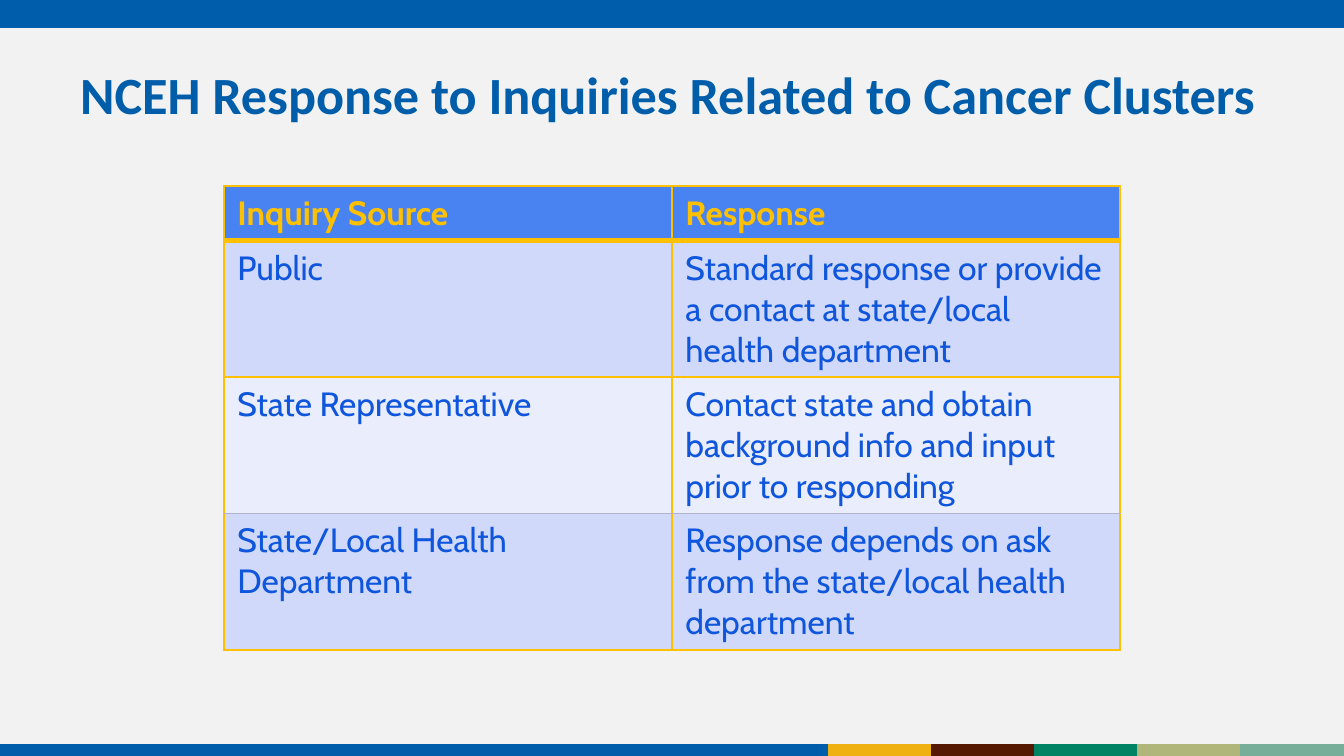
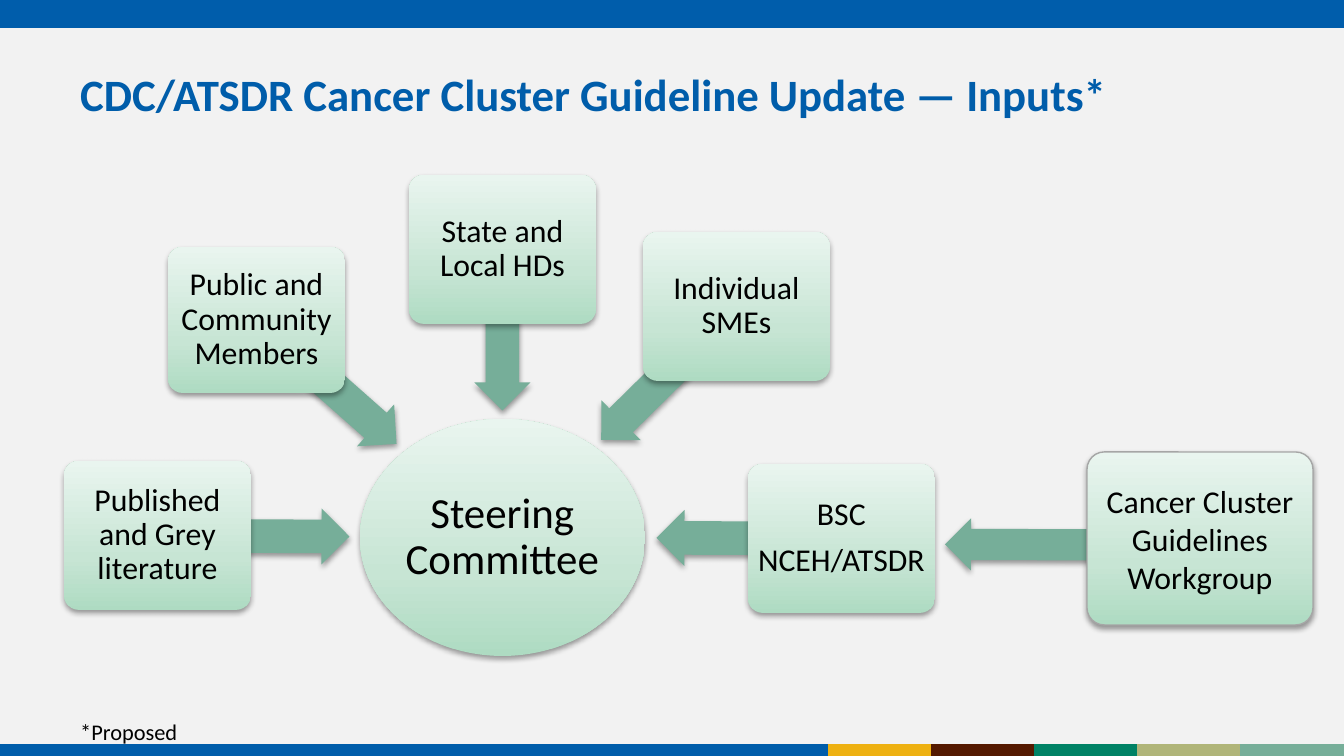
import math

import lxml.etree
import pptx
import pptx.dml.color
import pptx.enum.shapes
import pptx.enum.text
import pptx.oxml
import pptx.oxml.ns
import pptx.util

RGBColor = pptx.dml.color.RGBColor
Pt = pptx.util.Pt
SHAPE = pptx.enum.shapes.MSO_SHAPE
ALIGN = pptx.enum.text.PP_ALIGN
ANCHOR = pptx.enum.text.MSO_ANCHOR
qn = pptx.oxml.ns.qn

EMU_PER_PX = 914400 / 134.4
SLIDE_W, SLIDE_H = 1344, 756

PAPER = RGBColor(0xF2, 0xF2, 0xF2)
BAND_BLUE = RGBColor(0x00, 0x5D, 0xAB)
TITLE_BLUE = RGBColor(0x00, 0x5D, 0xAA)
SAGE = RGBColor(0x76, 0xAE, 0x99)
STRIPES = [RGBColor(0xEE, 0xB1, 0x11), RGBColor(0x54, 0x19, 0x00),
           RGBColor(0x00, 0x82, 0x65), RGBColor(0xB0, 0xB5, 0x79), SAGE]
BLACK = RGBColor(0, 0, 0)
OUTLINE_GREY = RGBColor(0xA6, 0xA6, 0xA6)
GOLD = RGBColor(0xFF, 0xC0, 0x00)
RULE_GREY = RGBColor(0xB0, 0xB4, 0xC8)
HEADER_BLUE = RGBColor(0x49, 0x83, 0xF2)
CELL_TEXT = RGBColor(0x0F, 0x56, 0xDC)
ROW_DARK = RGBColor(0xD0, 0xD9, 0xFA)
ROW_LIGHT = RGBColor(0xE9, 0xED, 0xFC)
MINT = [(0, RGBColor(0xAE, 0xDB, 0xC2)), (35, RGBColor(0xC7, 0xE5, 0xD4)),
        (100, RGBColor(0xE9, 0xF5, 0xEF))]

INQUIRIES = [
    ("Inquiry Source", "Response"),
    ("Public", "Standard response or provide a contact at state/local health department"),
    ("State Representative",
     "Contact state and obtain background info and input prior to responding"),
    ("State/Local Health Department",
     "Response depends on ask from the state/local health department"),
]

# Card box and length of the arrow from its centre towards the committee
INPUTS = [
    ((64, 461, 187, 149), 192, ["Published and Grey literature"]),
    ((168, 247, 177, 146), 187, ["Public and Community Members"]),
    ((409, 175, 187, 149), 161, ["State and Local HDs"]),
    ((643, 232, 187, 149), 190, ["Individual SMEs"]),
    ((748, 464, 187, 149), 185, ["BSC", "NCEH/ATSDR"]),
]


def px(length):
    return pptx.util.Emu(round(length * EMU_PER_PX))


def px_all(box):
    return [px(length) for length in box]


def centre(box):
    left, top, width, height = box
    return left + width / 2, top + height / 2


def set_font(paragraph, name, size, color, bold=False):
    font = paragraph.font
    font.name, font.size, font.bold = name, Pt(size), bold
    font.color.rgb = color


def add_label(slide, box, text, size, color, bold=False, anchor=ANCHOR.TOP):
    frame = slide.shapes.add_textbox(*px_all(box)).text_frame
    frame.word_wrap = True
    frame.vertical_anchor = anchor
    frame.text = text
    set_font(frame.paragraphs[0], "Calibri", size, color, bold)


def add_footer_stripes(slide, start=828, y=751):
    edges = [0] + [start + (SLIDE_W - start) * i // len(STRIPES)
                   for i in range(len(STRIPES) + 1)]
    for left, right, color in zip(edges, edges[1:], [TITLE_BLUE] + STRIPES):
        stripe = slide.shapes.add_connector(
            pptx.enum.shapes.MSO_CONNECTOR.STRAIGHT, *px_all((left, y, right, y)))
        stripe.line.color.rgb = color
        stripe.line.width = Pt(7.5)
        lxml.etree.SubElement(stripe._element.spPr, qn("a:effectLst"))


def add_base_slide(deck, title, title_size):
    """Add a slide with the shared background, bands and title."""
    slide = deck.slides.add_slide(deck.slide_layouts[6])
    slide.background.fill.solid()
    slide.background.fill.fore_color.rgb = PAPER
    band = slide.shapes.add_shape(SHAPE.RECTANGLE, *px_all((0, 0, SLIDE_W, 28)))
    band.shadow.inherit = False
    band.fill.solid()
    band.fill.fore_color.rgb = BAND_BLUE
    band.line.fill.background()
    add_footer_stripes(slide)
    add_label(slide, (67, 31, 1210, 126), title, title_size, TITLE_BLUE,
              bold=True, anchor=ANCHOR.MIDDLE)
    return slide


def set_cell_border(cell, side, color, width):
    line = lxml.etree.SubElement(cell._tc.get_or_add_tcPr(), qn(f"a:ln{side}"),
                                 w=str(Pt(width)))
    fill = lxml.etree.SubElement(line, qn("a:solidFill"))
    lxml.etree.SubElement(fill, qn("a:srgbClr"), val=str(color))


def add_inquiry_table(slide, box, header_height=55):
    left, top, width, height = box
    row_count = len(INQUIRIES)
    table = slide.shapes.add_table(row_count, 2, *px_all(box)).table
    table.horz_banding = False
    for column in table.columns:
        column.width = px(width / 2)
    # Rules above each row, and the one below the last
    rules = [(GOLD, 1), (GOLD, 3), (GOLD, 1), (RULE_GREY, 0.5), (GOLD, 1)]
    for r, texts in enumerate(INQUIRIES):
        is_header = r == 0
        table.rows[r].height = px(
            header_height if is_header else (height - header_height) / (row_count - 1))
        for c, text in enumerate(texts):
            cell = table.cell(r, c)
            for side, rule in zip("LRTB", [(GOLD, 1), (GOLD, 1), rules[r], rules[r + 1]]):
                set_cell_border(cell, side, *rule)
            cell.fill.solid()
            cell.fill.fore_color.rgb = (
                HEADER_BLUE if is_header else ROW_DARK if r % 2 else ROW_LIGHT)
            cell.text = text
            set_font(cell.text_frame.paragraphs[0], "Cabin", 18,
                     GOLD if is_header else CELL_TEXT, is_header)


def add_soft_shadow(shape):
    shape.shadow.inherit = False
    effects = shape._element.spPr.find(qn("a:effectLst"))
    shadow = lxml.etree.SubElement(effects, qn("a:outerShdw"), blurRad=str(Pt(3.1)),
                                   dist=str(Pt(1.6)), dir="5400000", rotWithShape="0")
    color = lxml.etree.SubElement(shadow, qn("a:srgbClr"), val=str(BLACK))
    lxml.etree.SubElement(color, qn("a:alpha"), val="38000")


def fill_mint(shape):
    """Fill with the three-stop gradient, darkest at the bottom."""
    shape.fill.gradient()
    shape.fill.gradient_angle = 90
    stops = shape._element.spPr.find(qn("a:gradFill")).find(qn("a:gsLst"))
    for stop in list(stops):
        stops.remove(stop)
    for percent, color in MINT:
        stop = lxml.etree.SubElement(stops, qn("a:gs"), pos=str(percent * 1000))
        lxml.etree.SubElement(stop, qn("a:srgbClr"), val=str(color))


def add_node(slide, kind, box, lines, size=17, inset=5, line_spacing=0.9, outline=None):
    node = slide.shapes.add_shape(kind, *px_all(box))
    if kind == SHAPE.ROUNDED_RECTANGLE:
        node.adjustments[0] = 0.1
    fill_mint(node)
    if outline:
        node.line.color.rgb = outline
        node.line.width = Pt(0.75)
    else:
        node.line.fill.background()
    add_soft_shadow(node)
    frame = node.text_frame
    frame.word_wrap = True
    frame.vertical_anchor = ANCHOR.MIDDLE
    frame.margin_left = frame.margin_right = px(inset)
    frame.margin_top = frame.margin_bottom = px(5)
    frame.text = "\n".join(lines)
    for paragraph in frame.paragraphs:
        paragraph.alignment = ALIGN.CENTER
        paragraph.line_spacing = line_spacing
        paragraph.space_after = Pt(6 if len(lines) > 1 else 0)
        set_font(paragraph, "Calibri", size, BLACK)


def add_arrow(slide, tail, target, length, thickness=56):
    """Draw a block arrow of the given length from tail towards target."""
    angle = math.atan2(tail[1] - target[1], tail[0] - target[0])
    middle_x = tail[0] - length / 2 * math.cos(angle)
    middle_y = tail[1] - length / 2 * math.sin(angle)
    arrow = slide.shapes.add_shape(SHAPE.LEFT_ARROW, *px_all(
        (middle_x - length / 2, middle_y - thickness / 2, length, thickness)))
    arrow.adjustments[0], arrow.adjustments[1] = 0.6, 0.5
    arrow.rotation = round(math.degrees(angle) % 360, 1)
    arrow.fill.solid()
    arrow.fill.fore_color.rgb = SAGE
    arrow.line.fill.background()
    add_soft_shadow(arrow)


def add_input_diagram(slide):
    committee = (360, 419, 285, 237)
    add_node(slide, SHAPE.OVAL, committee, ["Steering Committee"], size=23, inset=3)
    for card, reach, lines in INPUTS:
        add_arrow(slide, centre(card), centre(committee), reach)
        add_node(slide, SHAPE.ROUNDED_RECTANGLE, card, lines)
    add_arrow(slide, (1106, 545), (840, 544), 161, thickness=52)
    add_node(slide, SHAPE.ROUNDED_RECTANGLE, (1087, 452, 226, 173),
             ["Cancer Cluster Guidelines Workgroup"],
             inset=13, line_spacing=1.0, outline=OUTLINE_GREY)


def main():
    deck = pptx.Presentation()
    deck.slide_width, deck.slide_height = px(SLIDE_W), px(SLIDE_H)

    responses = add_base_slide(
        deck, "NCEH Response to Inquiries Related to Cancer Clusters", 28)
    add_inquiry_table(responses, (224, 186, 896, 464))

    inputs = add_base_slide(
        deck, "CDC/ATSDR Cancer Cluster Guideline Update — Inputs*", 24)
    add_input_diagram(inputs)
    add_label(inputs, (67, 712, 409, 40), "*Proposed", 12, BLACK)

    deck.save("out.pptx")


if __name__ == "__main__":
    main()
